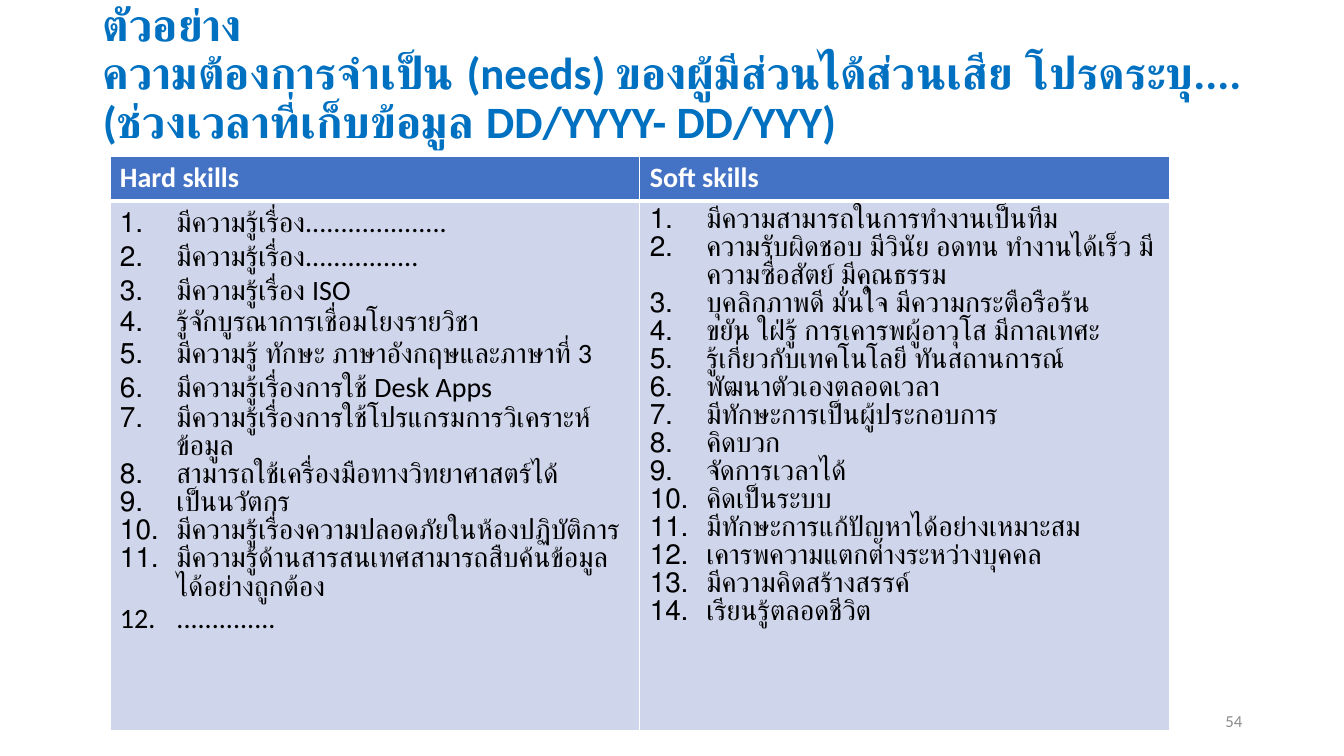
from dataclasses import dataclass

from lxml import etree
from pptx import Presentation
from pptx.dml.color import RGBColor
from pptx.enum import text as txt
from pptx.oxml import ns
from pptx.util import Inches, Pt


@dataclass(frozen=True)
class Theme:
    """Colours, type sizes and font of the slide."""
    font: str = "Calibri"
    title: str = "0070C0"
    head: str = "4472C4"
    body: str = "CFD5EA"
    white: str = "FFFFFF"
    black: str = "000000"
    grey: str = "8C8C8C"
    big: int = 32
    mid: int = 20
    small: int = 12


THEME = Theme()

TITLE = [
    "ตัวอย่าง",
    "ความต้องการจำเป็น (needs) ของผู้มีส่วนได้ส่วนเสีย โปรดระบุ....",
    "(ช่วงเวลาที่เก็บข้อมูล DD/YYYY- DD/YYY)",
]

SKILLS = {
    "Hard skills": [
        "มีความรู้เรื่อง....................",
        "มีความรู้เรื่อง................",
        "มีความรู้เรื่อง ISO",
        "รู้จักบูรณาการเชื่อมโยงรายวิชา",
        "มีความรู้ ทักษะ ภาษาอังกฤษและภาษาที่ 3",
        "มีความรู้เรื่องการใช้ Desk Apps",
        "มีความรู้เรื่องการใช้โปรแกรมการวิเคราะห์ข้อมูล",
        "สามารถใช้เครื่องมือทางวิทยาศาสตร์ได้",
        "เป็นนวัตกร",
        "มีความรู้เรื่องความปลอดภัยในห้องปฏิบัติการ",
        "มีความรู้ด้านสารสนเทศสามารถสืบค้นข้อมูลได้อย่างถูกต้อง",
        "..............",
    ],
    "Soft skills": [
        "มีความสามารถในการทำงานเป็นทีม",
        "ความรับผิดชอบ มีวินัย อดทน ทำงานได้เร็ว มีความซื่อสัตย์ มีคุณธรรม",
        "บุคลิกภาพดี มั่นใจ มีความกระตือรือร้น",
        "ขยัน ใฝ่รู้ การเคารพผู้อาวุโส มีกาลเทศะ",
        "รู้เกี่ยวกับเทคโนโลยี ทันสถานการณ์",
        "พัฒนาตัวเองตลอดเวลา",
        "มีทักษะการเป็นผู้ประกอบการ",
        "คิดบวก",
        "จัดการเวลาได้",
        "คิดเป็นระบบ",
        "มีทักษะการแก้ปัญหาได้อย่างเหมาะสม",
        "เคารพความแตกต่างระหว่างบุคคล",
        "มีความคิดสร้างสรรค์",
        "เรียนรู้ตลอดชีวิต",
    ],
}


def add_run(para, words, size, color, bold=False):
    """Add one formatted run to a paragraph."""
    run = para.add_run()
    run.text = words
    run.font.name = THEME.font
    run.font.size = Pt(size)
    run.font.bold = bold
    run.font.color.rgb = RGBColor.from_string(color)


def add_title(slide, lines):
    """Place and fill the title placeholder."""
    title = slide.shapes.title
    title.left, title.top = Inches(0.92), Inches(0.02)
    title.width, title.height = Inches(11.5), Inches(1.45)
    frame = title.text_frame
    frame.word_wrap = True
    frame.auto_size = txt.MSO_AUTO_SIZE.NONE
    frame.vertical_anchor = txt.MSO_ANCHOR.MIDDLE
    para = frame.paragraphs[0]
    para.alignment = txt.PP_ALIGN.LEFT
    para.line_spacing = 0.9
    for i, line in enumerate(lines):
        if i:
            para.add_line_break()
        add_run(para, line, THEME.big, THEME.title, True)


def set_number(para):
    """Give a paragraph an automatic number and a hanging indent."""
    props = para._p.get_or_add_pPr()
    props.set("marL", str(Inches(0.56)))
    props.set("indent", str(-Inches(0.56)))
    etree.SubElement(props, ns.qn("a:buFont"), typeface="+mj-lt")
    etree.SubElement(props, ns.qn("a:buAutoNum"), type="arabicPeriod")


def style_cell(cell, fill, top, base):
    """Fill a cell and draw its white borders."""
    cell.fill.solid()
    cell.fill.fore_color.rgb = RGBColor.from_string(fill)
    props = cell._tc.get_or_add_tcPr()
    sides = {"lnL": 1, "lnR": 1, "lnT": top, "lnB": base}
    for i, (side, width) in enumerate(sides.items()):
        line = etree.Element(ns.qn(f"a:{side}"), w=str(Pt(width)))
        solid = etree.SubElement(line, ns.qn("a:solidFill"))
        etree.SubElement(solid, ns.qn("a:srgbClr"), val=THEME.white)
        props.insert(i, line)


def fill_list(cell, items):
    """Write the items as a numbered list in a cell."""
    frame = cell.text_frame
    for i, item in enumerate(items):
        para = frame.add_paragraph() if i else frame.paragraphs[0]
        set_number(para)
        add_run(para, item, THEME.mid, THEME.black)


def add_skills(slide, skills):
    """Add the table with one column per kind of skill."""
    frame = slide.shapes.add_table(
        2, len(skills), Inches(1.09), Inches(1.55), Inches(10.51), Inches(5.69))
    table = frame.table
    for row, high in zip(table.rows, (0.43, 5.26)):
        row.height = Inches(high)
    for i, (name, items) in enumerate(skills.items()):
        head, body = table.cell(0, i), table.cell(1, i)
        style_cell(head, THEME.head, 1, 3)
        style_cell(body, THEME.body, 3, 1)
        add_run(head.text_frame.paragraphs[0], name, THEME.mid, THEME.white, True)
        fill_list(body, items)


def add_page(slide, number):
    """Add the page number at the bottom right."""
    box = slide.shapes.add_textbox(
        Inches(9.42), Inches(6.95), Inches(3), Inches(0.4))
    frame = box.text_frame
    frame.word_wrap = True
    frame.vertical_anchor = txt.MSO_ANCHOR.MIDDLE
    para = frame.paragraphs[0]
    para.alignment = txt.PP_ALIGN.RIGHT
    add_run(para, number, THEME.small, THEME.grey)


def main():
    """Build the slide and save it."""
    deck = Presentation()
    deck.slide_width, deck.slide_height = Inches(13.33), Inches(7.5)
    slide = deck.slides.add_slide(deck.slide_layouts[5])
    add_title(slide, TITLE)
    add_skills(slide, SKILLS)
    add_page(slide, "54")
    deck.save("out.pptx")


if __name__ == "__main__":
    main()
